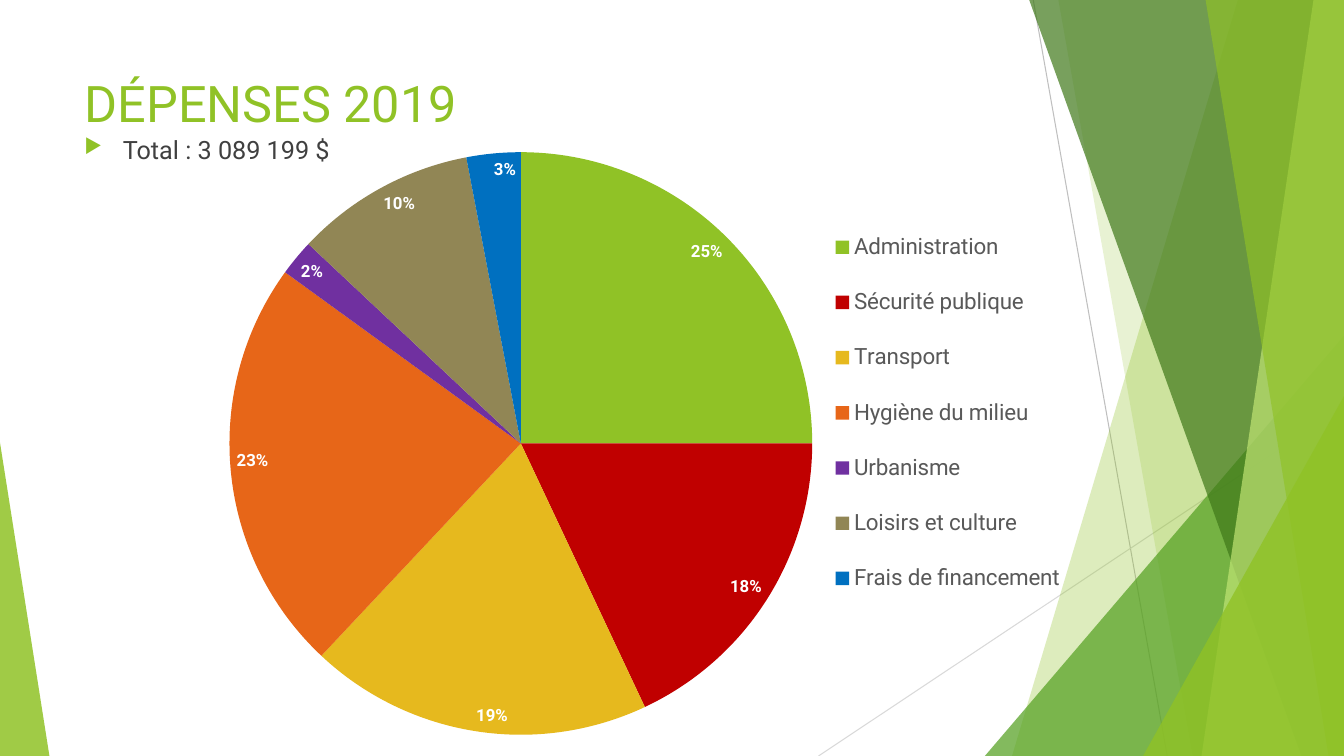
from lxml import etree
from pptx import Presentation, util as u
from pptx.chart import data
from pptx.dml import color
from pptx.enum import chart as charts, shapes, text
from pptx.oxml import parse_xml
from pptx.oxml.ns import nsdecls, qn

theme = {
    "font": "Roboto",
    "green": "90C226",
    "text": "404040",
    "legend": "595959",
    "label": "FFFFFF",
    "title_size": 36,
    "body_size": 18,
    "legend_size": 16,
    "label_size": 12,
}

deck = Presentation()
deck.slide_width, deck.slide_height = u.Inches(13.33), u.Inches(7.5)
column, row = deck.slide_width / 100, deck.slide_height / 100
page = deck.slides.add_slide(deck.slide_layouts[5])


def place(*grid):
    return [round(value * (row if index % 2 else column)) for index, value in enumerate(grid)]


def style(font, size, rgb, bold=False):
    font.name, font.size, font.bold = theme["font"], u.Pt(size), bold
    font.color.rgb = color.RGBColor.from_string(rgb)


rays = [
    (76.88, 0, 86.85, 100, "BFBFBF"),
    (100, 53.73, 60.9, 100, "D9D9D9"),
]
for *ends, rgb in rays:
    ray = page.shapes.add_connector(shapes.MSO_CONNECTOR.STRAIGHT, *place(*ends))
    ray.line.color.rgb = color.RGBColor.from_string(rgb)
    ray.line.width = u.Pt(0.75)
    etree.SubElement(ray._element.spPr, qn("a:effectLst"))

facets = [
    ("band", (92.1, 75.3), theme["green"], 30),
    ("band", (78.75, 88.73), theme["green"], 20),
    ("right", (73.28, 44.4, 26.72, 55.6), "54A021", 72),
    ("band", (76.58, 96.83), "3F7819", 70),
    ("band", (97.73, 89.4), "C0E474", 70),
    ("band", (89.7, 98.85), theme["green"], 65),
    ("right", (85.05, 52.4, 14.95, 47.6), theme["green"], 80),
    ("left", (0, 58.53, 3.68, 41.47), theme["green"], 85),
]
for kind, grid, rgb, opacity in facets:
    if kind == "band":
        top, bottom = grid
        builder = page.shapes.build_freeform(*place(top, 0))
        builder.add_line_segments([place(100, 0), place(100, 100), place(bottom, 100)])
        facet = builder.convert_to_shape()
    else:
        facet = page.shapes.add_shape(shapes.MSO_SHAPE.ISOSCELES_TRIANGLE, *place(*grid))
        facet.adjustments[0] = 1 if kind == "right" else 0
    facet.shadow.inherit = False
    facet.line.fill.background()
    facet.fill.solid()
    facet.fill.fore_color.rgb = color.RGBColor.from_string(rgb)
    tint = facet._element.spPr.find(".//" + qn("a:srgbClr"))
    etree.SubElement(tint, qn("a:alpha"), val=str(opacity * 1000))

title = page.shapes.title
body = page.shapes.add_textbox(*place(5.55, 17.07, 70.5, 68.67))
title.left, title.top, title.width, title.height = place(5.55, 8.93, 70.5, 19.2)
wordings = [
    (title, "DÉPENSES 2019", theme["title_size"], theme["green"]),
    (body, "Total : 3 089 199 $", theme["body_size"], theme["text"]),
]
for box, wording, size, rgb in wordings:
    box.text_frame.text = wording
    box.text_frame.word_wrap = True
    box.text_frame.auto_size = text.MSO_AUTO_SIZE.NONE
    box.text_frame.vertical_anchor = text.MSO_ANCHOR.TOP
    para = box.text_frame.paragraphs[0]
    para.alignment = text.PP_ALIGN.LEFT
    style(para.runs[0].font, size, rgb)

total = body.text_frame.paragraphs[0]
total.space_before = u.Pt(10)
bullet = total._p.get_or_add_pPr()
bullet.set("marL", str(u.Inches(0.38)))
bullet.set("indent", str(u.Inches(-0.38)))
bullet_color = etree.SubElement(bullet, qn("a:buClr"))
etree.SubElement(bullet_color, qn("a:srgbClr"), val=theme["green"])
etree.SubElement(bullet, qn("a:buSzPct"), val="80000")
etree.SubElement(bullet, qn("a:buChar"), char="▶")

expenses = [
    ("Administration", 25, theme["green"]),
    ("Sécurité publique", 18, "C00000"),
    ("Transport", 19, "E6B91E"),
    ("Hygiène du milieu", 23, "E76618"),
    ("Urbanisme", 2, "7030A0"),
    ("Loisirs et culture", 10, "918655"),
    ("Frais de financement", 3, "0070C0"),
]
names, shares, colors = zip(*expenses)
figures = data.CategoryChartData()
figures.categories = names
figures.add_series("Dépenses", shares)
chart = page.shapes.add_chart(
    charts.XL_CHART_TYPE.PIE, *place(3.6, 20.13, 80.63, 77.07), figures
).chart
chart.has_title = False
chart.font.name = theme["font"]
chart.plots[0].vary_by_categories = True
series = chart.plots[0].series[0]
for index, rgb in enumerate(colors):
    slice_format = series.points[index].format
    slice_format.fill.solid()
    slice_format.fill.fore_color.rgb = color.RGBColor.from_string(rgb)
    slice_format.line.fill.background()

labels = series.data_labels
labels.show_value, labels.show_percentage = False, True
labels.number_format, labels.number_format_is_linked = "0%", False
labels.position = charts.XL_LABEL_POSITION.INSIDE_END
style(labels.font, theme["label_size"], theme["label"], True)

chart.has_legend = True
chart.legend.position = charts.XL_LEGEND_POSITION.RIGHT
chart.legend.include_in_layout = False
style(chart.legend.font, theme["legend_size"], theme["legend"])

plot_area = chart._chartSpace.find(".//" + qn("c:plotArea"))
legend = chart._chartSpace.find(".//" + qn("c:legend"))
layouts = [
    (plot_area, 0, '<c:layoutTarget val="inner"/>', (0.143, 0, 0.586, 1)),
    (legend, 1, "", (0.715, 0.09, 0.23, 0.715)),
]
for area, position, target, frame in layouts:
    for previous in area.findall(qn("c:layout")):
        area.remove(previous)
    modes = '<c:xMode val="edge"/><c:yMode val="edge"/>'
    sizes = "".join(f'<c:{key} val="{value}"/>' for key, value in zip("xywh", frame))
    area.insert(position, parse_xml(
        f'<c:layout {nsdecls("c")}><c:manualLayout>{target}{modes}{sizes}</c:manualLayout></c:layout>'
    ))

deck.save("out.pptx")
